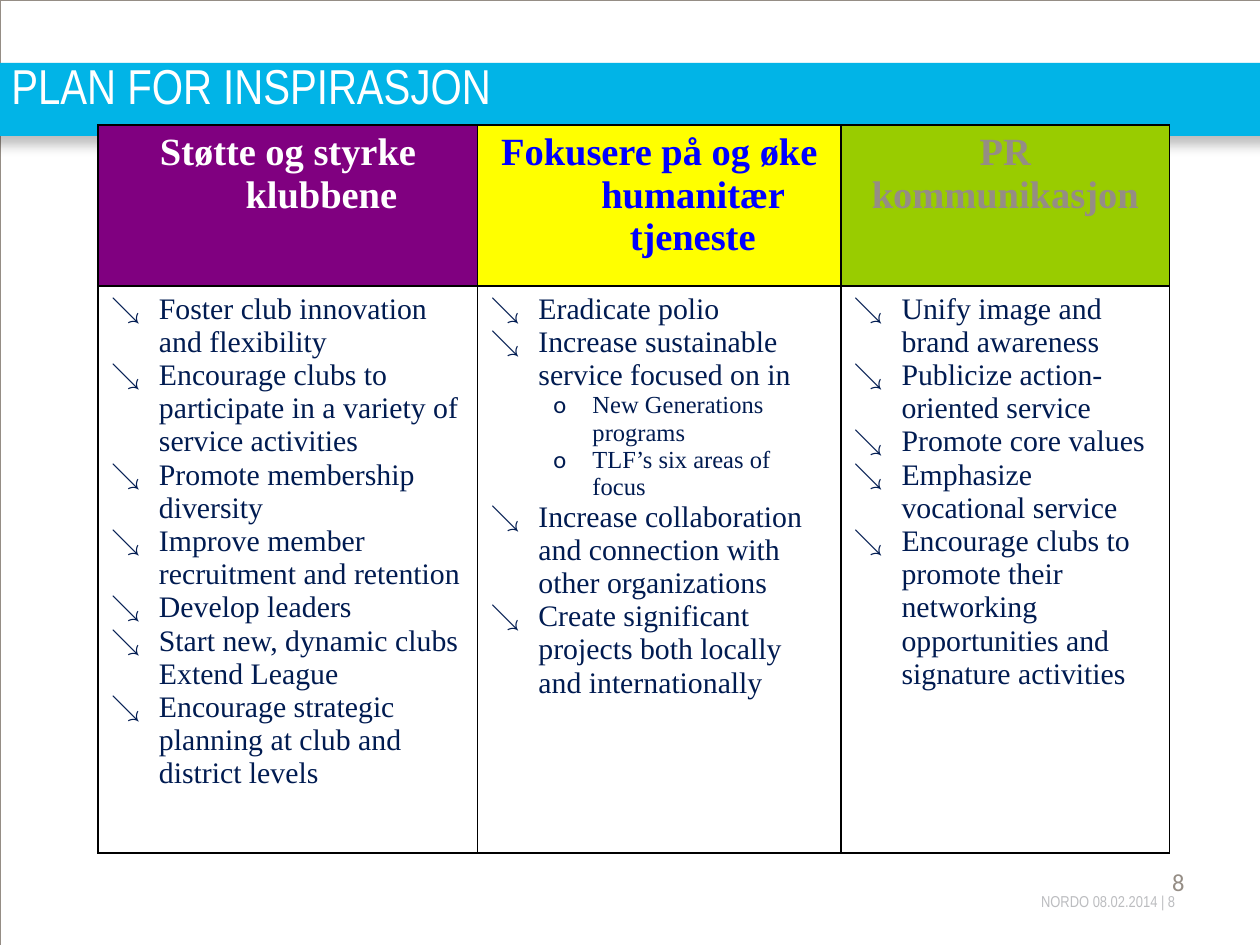
from dataclasses import dataclass

from lxml.etree import SubElement
from pptx import Presentation
from pptx.dml.color import RGBColor
from pptx.enum.shapes import MSO_SHAPE
from pptx.enum.text import MSO_ANCHOR, PP_ALIGN
from pptx.oxml.ns import qn
from pptx.util import Cm, Pt


@dataclass(frozen=True)
class Theme:
    white: str = "FFFFFF"
    black: str = "000000"
    band: str = "01B4E7"
    stone: str = "958D85"
    pale: str = "BCBDC0"
    navy: str = "001B51"
    blue: str = "0000FF"
    purple: str = "800080"
    yellow: str = "FFFF00"
    green: str = "99CC00"
    narrow: str = "Arial Narrow"
    serif: str = "Times New Roman"
    sans: str = "Calibri"
    title: int = 28
    head: int = 22
    item: int = 17
    sub: int = 14
    page: int = 14
    foot: int = 9


THEME = Theme()

# Column: width, fill, text colour, heading lines, items as (level, text)
COLUMNS = [
    (7.65, THEME.purple, THEME.white, ["Støtte og styrke klubbene"], [
        (0, "Foster club innovation and flexibility"),
        (0, "Encourage clubs to participate in a variety of service activities"),
        (0, "Promote membership diversity"),
        (0, "Improve member recruitment and retention"),
        (0, "Develop leaders"),
        (0, "Start new, dynamic clubs Extend League"),
        (0, "Encourage strategic planning at club and district levels"),
    ]),
    (7.32, THEME.yellow, THEME.blue, ["Fokusere på og øke humanitær tjeneste"], [
        (0, "Eradicate polio"),
        (0, "Increase sustainable service focused on in"),
        (1, "New Generations programs"),
        (1, "TLF’s six areas of focus"),
        (0, "Increase collaboration and connection with other organizations"),
        (0, "Create significant projects both locally and internationally"),
    ]),
    (6.63, THEME.green, THEME.stone, ["PR", "kommunikasjon"], [
        (0, "Unify image and brand awareness"),
        (0, "Publicize action-oriented service"),
        (0, "Promote core values"),
        (0, "Emphasize vocational service"),
        (0, "Encourage clubs to promote their networking opportunities "
            "and signature activities"),
    ]),
]
ROWS = [3.25, 11.43]
# Bullet level: sign, sign font, text size, left margin, hang
LEVELS = [
    ("↘", THEME.serif, THEME.item, 0.97, 0.97),
    ("o", THEME.sans, THEME.sub, 2.06, 0.79),
]


def rgb(code):
    return RGBColor.from_string(code)


def style(para, face, size, color, bold=False):
    font = para.font
    font.name, font.size, font.bold = face, Pt(size), bold
    font.color.rgb = rgb(color)


def indent(para, left, hang):
    props = para._p.get_or_add_pPr()
    props.set("marL", str(Cm(left)))
    props.set("indent", str(-Cm(hang)))
    return props


def add_text(slide, box, text, face, size, color, align=PP_ALIGN.LEFT,
             anchor=MSO_ANCHOR.TOP, pads=(0, 0, 0, 0)):
    frame = slide.shapes.add_textbox(*map(Cm, box)).text_frame
    frame.word_wrap = True
    frame.vertical_anchor = anchor
    (frame.margin_left, frame.margin_top,
     frame.margin_right, frame.margin_bottom) = map(Cm, pads)
    para = frame.paragraphs[0]
    para.text, para.alignment = text, align
    style(para, face, size, color)


def add_rect(slide, box):
    rect = slide.shapes.add_shape(MSO_SHAPE.RECTANGLE, *map(Cm, box))
    rect.shadow.inherit = False
    return rect


def add_frame(slide):
    rect = add_rect(slide, (0, 0, 25.4, 19.05))
    rect.fill.background()
    rect.line.color.rgb = rgb(THEME.stone)
    rect.line.width = Pt(0.13)


def add_band(slide):
    rect = add_rect(slide, (-0.2, 1.27, 25.83, 1.47))
    rect.fill.solid()
    rect.fill.fore_color.rgb = rgb(THEME.band)
    rect.line.fill.background()
    # Soft shadow straight below
    glow = SubElement(rect._element.spPr.find(qn("a:effectLst")),
                      qn("a:outerShdw"), blurRad=str(Pt(7)),
                      dist=str(Pt(4.8)), dir="5400000", rotWithShape="0")
    tint = SubElement(glow, qn("a:srgbClr"), val=THEME.black)
    SubElement(tint, qn("a:alpha"), val="25000")


def add_edges(cell):
    props = cell._tc.get_or_add_tcPr()
    for side in ("lnL", "lnR", "lnT", "lnB"):
        line = SubElement(props, qn(f"a:{side}"), w=str(Pt(1)))
        fill = SubElement(line, qn("a:solidFill"))
        SubElement(fill, qn("a:srgbClr"), val=THEME.black)


def add_paras(frame, count):
    for _ in range(count - 1):
        frame.add_paragraph()
    return frame.paragraphs


def fill_head(cell, fill, color, lines):
    add_edges(cell)
    cell.fill.solid()
    cell.fill.fore_color.rgb = rgb(fill)
    for para, text in zip(add_paras(cell.text_frame, len(lines)), lines):
        para.text, para.alignment = text, PP_ALIGN.CENTER
        indent(para, 1.35, 1.35)
        style(para, THEME.serif, THEME.head, color, True)


def fill_list(cell, items):
    add_edges(cell)
    cell.fill.background()
    for para, (level, text) in zip(add_paras(cell.text_frame, len(items)), items):
        sign, face, size, left, hang = LEVELS[level]
        para.text, para.level = text, level
        props = indent(para, left, hang)
        SubElement(props, qn("a:buFont"), typeface=face)
        SubElement(props, qn("a:buChar"), char=sign)
        style(para, THEME.serif, size, THEME.navy)


def add_plan(slide):
    width = sum(col[0] for col in COLUMNS)
    table = slide.shapes.add_table(len(ROWS), len(COLUMNS), Cm(1.98), Cm(2.52),
                                   Cm(width), Cm(sum(ROWS))).table
    table.first_row = table.horz_banding = False
    for row, high in zip(table.rows, ROWS):
        row.height = Cm(high)
    for num, (wide, fill, color, lines, items) in enumerate(COLUMNS):
        table.columns[num].width = Cm(wide)
        fill_head(table.cell(0, num), fill, color, lines)
        fill_list(table.cell(1, num), items)


def main():
    deck = Presentation()
    deck.slide_width, deck.slide_height = Cm(25.4), Cm(19.05)
    slide = deck.slides.add_slide(deck.slide_layouts[6])

    # Footer and backdrop
    add_text(slide, (15.21, 17.98, 8.48, 0.38), "NORDO 08.02.2014 | 8",
             THEME.narrow, THEME.foot, THEME.pale, PP_ALIGN.RIGHT)
    add_frame(slide)
    add_band(slide)

    # Title, table and page number
    add_text(slide, (0, 1.12, 25.4, 1.19), "PLAN FOR INSPIRASJON",
             THEME.narrow, THEME.title, THEME.white,
             anchor=MSO_ANCHOR.MIDDLE, pads=(0.23, 0, 0, 0))
    add_plan(slide)
    add_text(slide, (18.21, 17.35, 5.92, 1.32), "8", THEME.sans, THEME.page,
             THEME.stone, PP_ALIGN.RIGHT, pads=(0.25, 0.13, 0.25, 0.13))
    deck.save("out.pptx")


if __name__ == "__main__":
    main()
